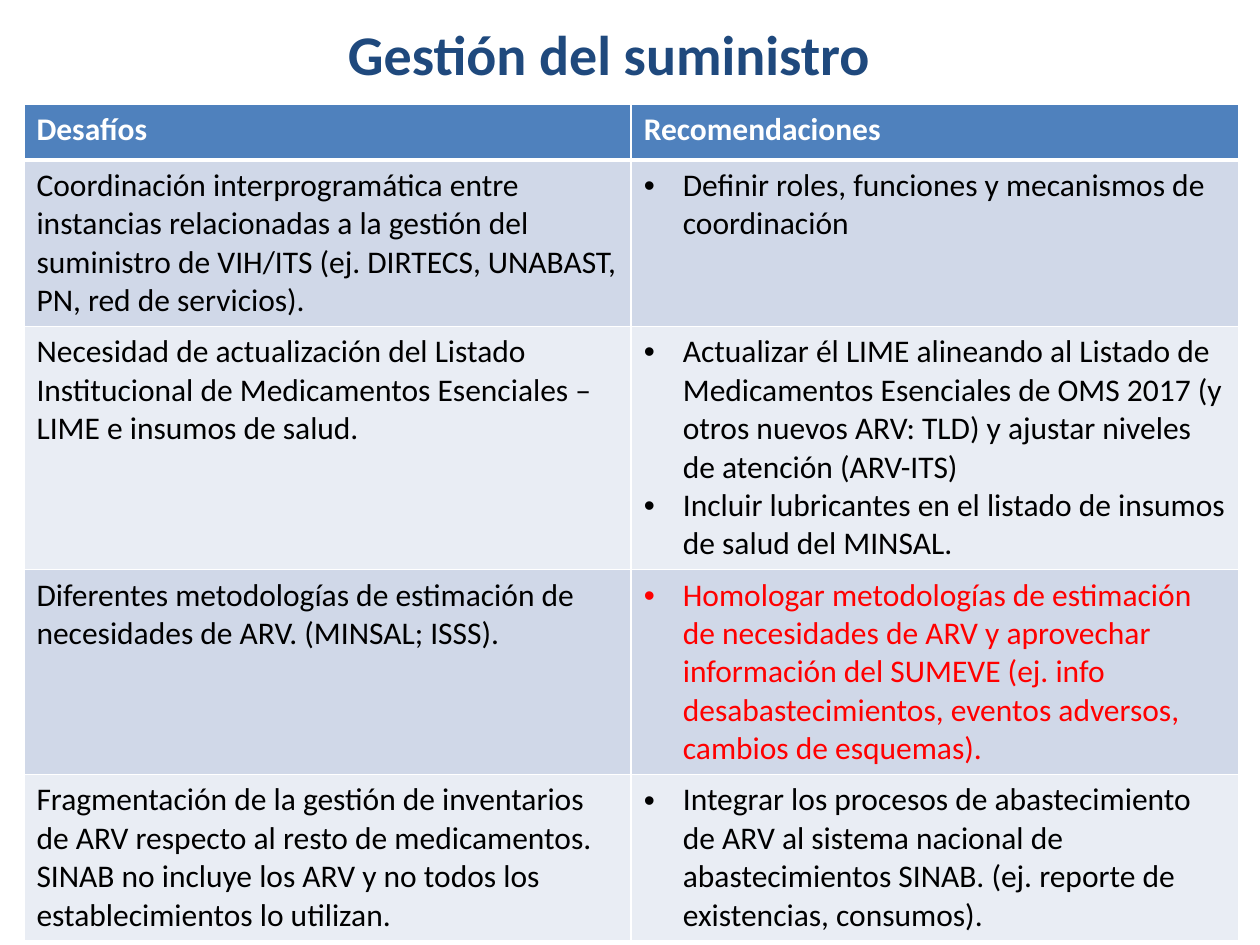
from dataclasses import dataclass

from lxml.etree import SubElement
from pptx import Presentation
from pptx.dml.color import RGBColor
from pptx.enum.text import PP_ALIGN
from pptx.oxml.ns import qn
from pptx.util import Inches, Pt

FONT = "Calibri"
BULLET_INDENT = Inches(0.31)
HEADER_FILL = "4F81BD"
BAND_FILLS = ("D0D8E8", "E9EDF4")
BORDER_COLOR = "FFFFFF"
HEADINGS = ("Desafíos", "Recomendaciones")


@dataclass(frozen=True)
class Topic:
    height: float
    challenges: tuple[str, ...]
    recommendations: tuple[str, ...]
    color: str = "000000"


TOPICS = (
    Topic(
        1.3,
        ("Coordinación interprogramática entre instancias relacionadas a la gestión "
         "del suministro de VIH/ITS (ej. DIRTECS, UNABAST, PN, red de servicios).",),
        ("Definir roles, funciones y mecanismos de coordinación",),
    ),
    Topic(
        1.9,
        ("Necesidad de actualización del Listado Institucional de Medicamentos "
         "Esenciales – LIME e insumos de salud.",),
        ("Actualizar él LIME alineando al Listado de Medicamentos Esenciales de OMS "
         "2017 (y otros nuevos ARV: TLD) y ajustar niveles de atención (ARV-ITS)",
         "Incluir lubricantes en el listado de insumos de salud del MINSAL."),
    ),
    Topic(
        1.6,
        ("Diferentes metodologías de estimación de necesidades de ARV. "
         "(MINSAL; ISSS).",),
        ("Homologar metodologías de estimación de necesidades de ARV y aprovechar "
         "información del SUMEVE (ej. info desabastecimientos, eventos adversos, "
         "cambios de esquemas).",),
        color="FF0000",
    ),
    Topic(
        1.3,
        ("Fragmentación de la gestión de inventarios de ARV respecto al resto de "
         "medicamentos.",
         "SINAB no incluye los ARV y no todos los establecimientos lo utilizan."),
        ("Integrar los procesos de abastecimiento de ARV al sistema nacional de "
         "abastecimientos SINAB. (ej. reporte de existencias, consumos).",),
    ),
)


def rgb(color: str) -> RGBColor:
    return RGBColor.from_string(color)


def write_text(frame, lines: tuple[str, ...], *, size: float = 18,
               color: str = "000000", bold: bool = False,
               align: PP_ALIGN = PP_ALIGN.LEFT, bullet: bool = False) -> None:
    frame.word_wrap = True
    for index, line in enumerate(lines):
        para = frame.add_paragraph() if index else frame.paragraphs[0]
        para.alignment = align
        if bullet:
            add_bullet(para)
        span = para.add_run()
        span.text = line
        span.font.name = FONT
        span.font.size = Pt(size)
        span.font.bold = bold
        span.font.color.rgb = rgb(color)


def add_bullet(para) -> None:
    properties = para._p.get_or_add_pPr()
    properties.set("marL", str(BULLET_INDENT))
    properties.set("indent", str(-BULLET_INDENT))
    SubElement(properties, qn("a:buFont"), typeface="Arial")
    SubElement(properties, qn("a:buChar"), char="•")


def style_cell(cell, fill: str, top: float = 1, bottom: float = 1) -> None:
    properties = cell._tc.get_or_add_tcPr()
    widths = {"a:lnL": 1, "a:lnR": 1, "a:lnT": top, "a:lnB": bottom}
    for edge, width in widths.items():
        line = SubElement(properties, qn(edge), w=str(Pt(width)))
        solid = SubElement(line, qn("a:solidFill"))
        SubElement(solid, qn("a:srgbClr"), val=BORDER_COLOR)
    cell.fill.solid()
    cell.fill.fore_color.rgb = rgb(fill)


def add_topic_table(page) -> None:
    heights = [0.44] + [topic.height for topic in TOPICS]
    frame = page.shapes.add_table(
        len(heights), len(HEADINGS),
        Inches(0.19), Inches(0.83), Inches(9.64), Inches(sum(heights)))
    table = frame.table
    for row, height in zip(table.rows, heights):
        row.height = Inches(height)

    for column, heading in enumerate(HEADINGS):
        cell = table.cell(0, column)
        style_cell(cell, HEADER_FILL, bottom=3)
        write_text(cell.text_frame, (heading,), color="FFFFFF", bold=True)

    for index, topic in enumerate(TOPICS):
        challenge, recommendation = table.rows[index + 1].cells
        for cell in (challenge, recommendation):
            style_cell(cell, BAND_FILLS[index % 2], top=1 if index else 3)
        write_text(challenge.text_frame, topic.challenges)
        write_text(recommendation.text_frame, topic.recommendations,
                   color=topic.color, bullet=True)


def add_title(page) -> None:
    box = page.shapes.add_textbox(Inches(0), Inches(0.11), Inches(9.67), Inches(0.64))
    write_text(box.text_frame, ("Gestión del suministro",), size=32,
               color="1F497D", bold=True, align=PP_ALIGN.CENTER)


def main() -> None:
    deck = Presentation()
    deck.slide_width = Inches(10)
    deck.slide_height = Inches(7.5)
    page = deck.slides.add_slide(deck.slide_layouts[6])
    add_topic_table(page)
    add_title(page)
    deck.save("out.pptx")


if __name__ == "__main__":
    main()
